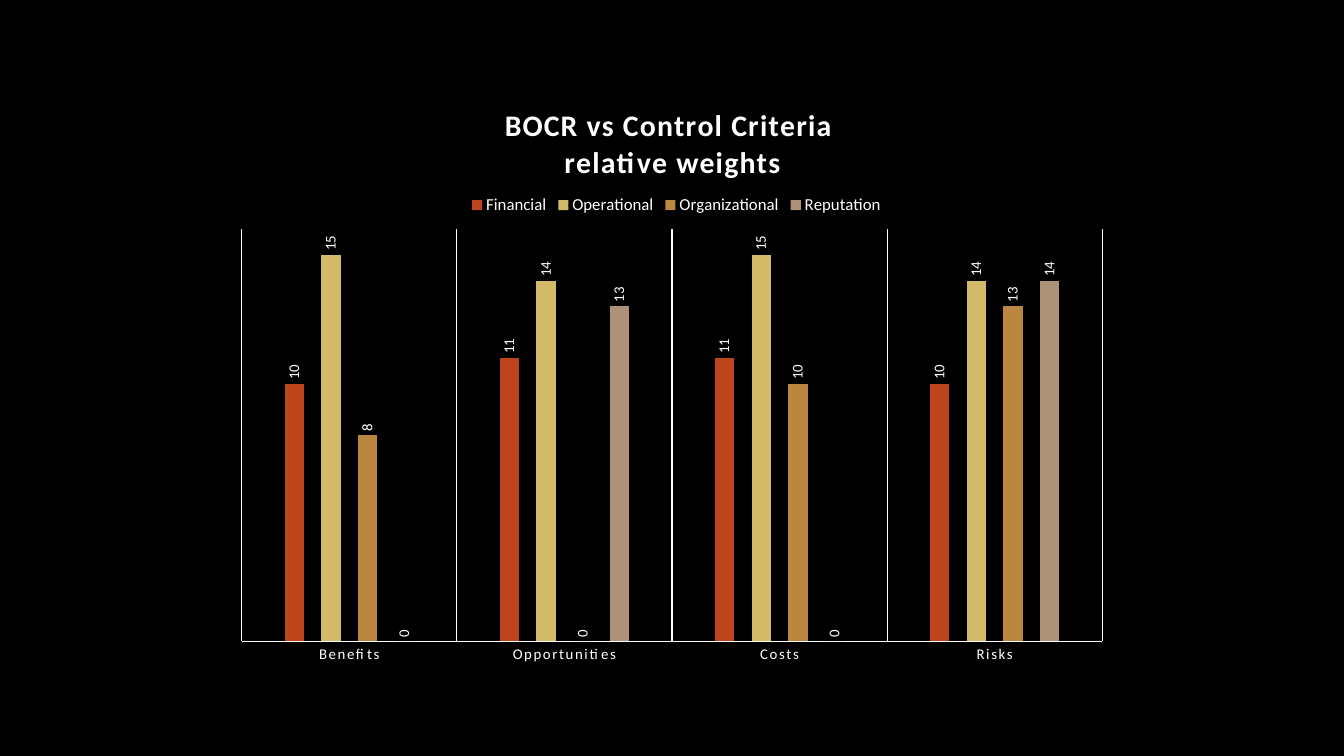
from pptx import Presentation
from pptx.chart.data import CategoryChartData
from pptx.dml.color import RGBColor
from pptx.enum.chart import XL_CHART_TYPE, XL_LABEL_POSITION, XL_LEGEND_POSITION, XL_TICK_MARK
from pptx.oxml import parse_xml
from pptx.oxml.ns import nsdecls, qn
from pptx.util import Inches, Pt

# Content
TITLE_LINES = ["BOCR vs Control Criteria ", "relative weights"]
BOCR = ["Benefits", "Opportunities", "Costs", "Risks"]
CRITERIA = [
    ("Financial", (10, 11, 11, 10), RGBColor(0xBC, 0x45, 0x1B)),
    ("Operational", (15, 14, 15, 14), RGBColor(0xD3, 0xBA, 0x68)),
    ("Organizational", (8, 0, 10, 13), RGBColor(0xBB, 0x86, 0x40)),
    ("Reputation", (0, 13, 0, 14), RGBColor(0xAD, 0x92, 0x77)),
]
WHITE = RGBColor(0xFF, 0xFF, 0xFF)
BLACK = RGBColor(0, 0, 0)
FONT = "Calibri"
LABEL_SIZE = 10.6


def style_font(font, size, bold=False):
    font.name = FONT
    font.size = Pt(size)
    font.bold = bold
    font.color.rgb = WHITE


def white_line(line):
    line.color.rgb = WHITE
    line.width = Pt(0.75)


def place(part, index, x, y, w=None, h=None, inner=False):
    """Set a manual layout, in fractions of the chart area."""
    for old in part.findall(qn("c:layout")):
        part.remove(old)
    target = '<c:layoutTarget val="inner"/>' if inner else ""
    modes = '<c:xMode val="edge"/><c:yMode val="edge"/>'
    sizes = "".join(f'<c:{key} val="{value}"/>'
                    for key, value in zip("xywh", (x, y, w, h)) if value is not None)
    part.insert(index, parse_xml(
        f'<c:layout {nsdecls("c")}><c:manualLayout>{target}{modes}{sizes}'
        '</c:manualLayout></c:layout>'))


# Slide
prs = Presentation()
prs.slide_width, prs.slide_height = Inches(13.33), Inches(7.5)
slide = prs.slides.add_slide(prs.slide_layouts[6])
slide.background.fill.solid()
slide.background.fill.fore_color.rgb = BLACK

# Chart
weights = CategoryChartData(number_format="0")
weights.categories = BOCR
for name, values, _ in CRITERIA:
    weights.add_series(name, values)
chart = slide.shapes.add_chart(
    XL_CHART_TYPE.COLUMN_CLUSTERED,
    Inches(2.22), Inches(0.79), Inches(8.89), Inches(5.93), weights).chart
style_font(chart.font, 10)

# Title
title = chart.chart_title.text_frame
for number, text in enumerate(TITLE_LINES):
    paragraph = title.add_paragraph() if number else title.paragraphs[0]
    run = paragraph.add_run()
    run.text = text
    style_font(run.font, 21.3, bold=True)
    run.font._element.set("spc", "100")
place(chart.chart_title._element, 1, 0.31, 0.04)

# Legend
chart.has_legend = True
chart.legend.position = XL_LEGEND_POSITION.TOP
chart.legend.include_in_layout = False
style_font(chart.legend.font, 12)
place(chart.legend._element, 1, 0.27, 0.18, 0.47, 0.06)

# Axes
bocr_axis = chart.category_axis
bocr_axis.major_tick_mark = XL_TICK_MARK.NONE
bocr_axis.has_major_gridlines = True
white_line(bocr_axis.major_gridlines.format.line)
white_line(bocr_axis.format.line)
style_font(bocr_axis.tick_labels.font, LABEL_SIZE)
bocr_axis.tick_labels.font._element.set("spc", "120")
weight_axis = chart.value_axis
weight_axis.minimum_scale, weight_axis.maximum_scale = 0, 16
weight_axis.has_major_gridlines = False
weight_axis.visible = False

# Columns with upright values
plot = chart.plots[0]
plot.gap_width, plot.overlap = 444, -90
plot.vary_by_categories = False
for criterion, (_, _, color) in zip(plot.series, CRITERIA):
    criterion.format.fill.solid()
    criterion.format.fill.fore_color.rgb = color
    labels = criterion.data_labels
    labels.show_value = True
    labels.position = XL_LABEL_POSITION.OUTSIDE_END
    style_font(labels.font, LABEL_SIZE)
    body = labels._element.find(f'{qn("c:txPr")}/{qn("a:bodyPr")}')
    body.set("rot", "-5400000")
    body.set("vert", "horz")
place(plot._element.getparent(), 0, 0.02, 0.25, 0.96, 0.69, inner=True)

prs.save("out.pptx")
